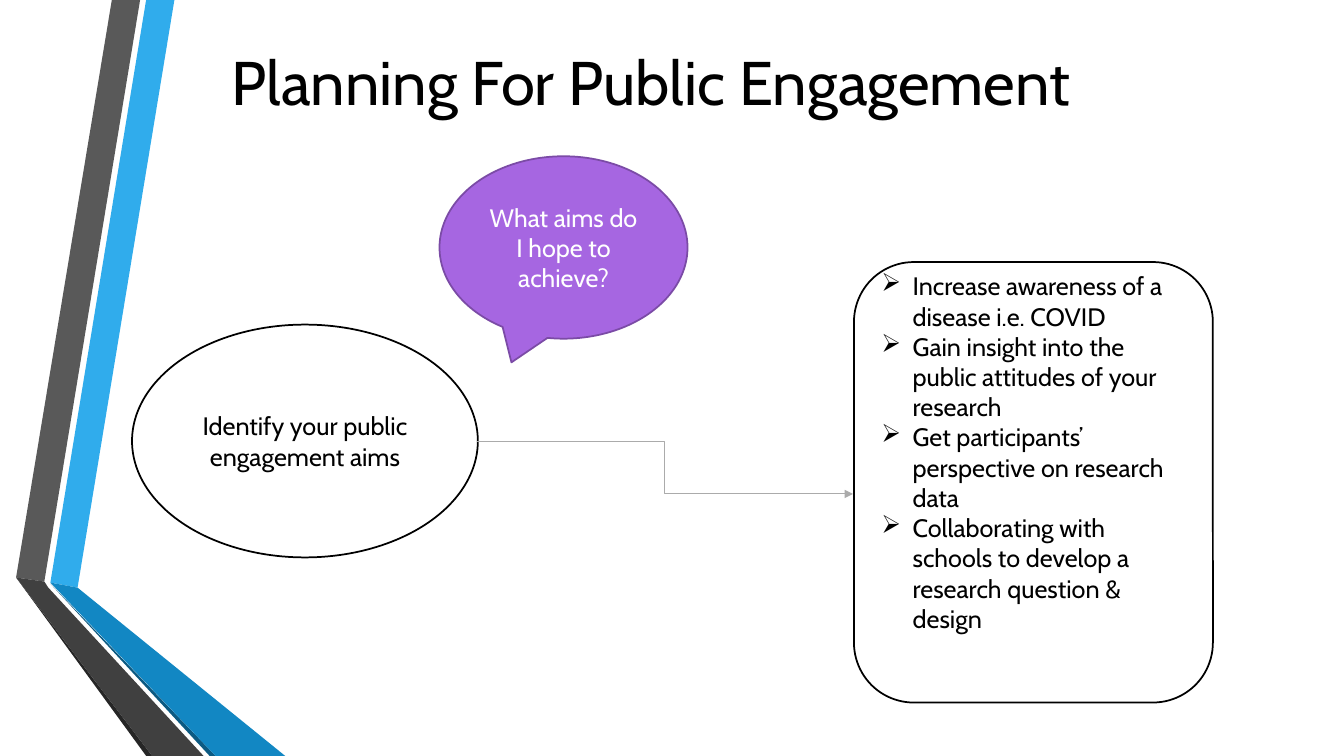
import dataclasses
import typing

import lxml.etree
import pptx
import pptx.dml.color
import pptx.enum.shapes
import pptx.enum.text
import pptx.oxml.ns
import pptx.util

Inches = pptx.util.Inches
ShapeKind = pptx.enum.shapes.MSO_SHAPE
Align = pptx.enum.text.PP_ALIGN
Anchor = pptx.enum.text.MSO_ANCHOR
Point = tuple[float, float]


@dataclasses.dataclass(frozen=True)
class Theme:
    font: str = "Cabin"
    title_size: int = 44
    body_size: int = 18
    outline_width: float = 1.25
    arrow_width: float = 0.75
    black: str = "000000"
    white: str = "FFFFFF"
    purple: str = "A666E1"
    purple_outline: str = "7B4BA6"
    arrow: str = "ABABAB"
    blue: str = "30ACEC"
    blue_fold: str = "1287C3"
    blue_shadow: str = "0C5A82"
    grey: str = "595959"
    grey_fold: str = "404040"
    grey_shadow: str = "262626"


THEME = Theme()


@dataclasses.dataclass(frozen=True)
class Ribbon:
    color: str
    points: list[Point]


@dataclasses.dataclass(frozen=True)
class Bubble:
    kind: ShapeKind
    box: tuple[float, float, float, float]
    fill: str
    outline: str
    text_color: str
    lines: list[str]
    bulleted: bool = False
    bottom_inset: float = 0.05
    adjustments: tuple[float, ...] = ()


RIBBONS = [
    Ribbon(THEME.blue, [(0.5, 5.78), (0.77, 5.83), (1.73, 0), (1.45, 0)]),
    Ribbon(THEME.grey, [(1.39, 0), (1.11, 0), (0.16, 5.73), (0.44, 5.77)]),
    Ribbon(THEME.grey_shadow, [(0.16, 5.73), (1.45, 7.5), (1.51, 7.5)]),
    Ribbon(THEME.blue_shadow, [(0.5, 5.79), (2.08, 7.5), (2.14, 7.5)]),
    Ribbon(THEME.blue_fold, [(0.5, 5.78), (2.14, 7.5), (2.83, 7.5), (0.77, 5.83)]),
    Ribbon(THEME.grey_fold, [(2.02, 7.5), (0.48, 5.83), (0.44, 5.77),
                             (0.16, 5.73), (1.51, 7.5)]),
]

AIMS = Bubble(ShapeKind.OVAL, (1.31, 3.22, 3.43, 2.31), THEME.white, THEME.black,
              THEME.black, ["Identify your public engagement aims"])
QUESTION = Bubble(ShapeKind.OVAL_CALLOUT, (4.36, 1.55, 2.46, 1.81), THEME.purple,
                  THEME.purple_outline, THEME.white,
                  ["What aims do I hope to achieve?"], adjustments=(-0.21, 0.63))
EXAMPLES = Bubble(
    ShapeKind.ROUNDED_RECTANGLE, (8.47, 2.6, 3.56, 4.37), THEME.white, THEME.black,
    THEME.black,
    ["Increase awareness of a disease i.e. COVID",
     "Gain insight into the public attitudes of your research",
     "Get participants’ perspective on research data",
     "Collaborating with schools to develop a research question & design"],
    bulleted=True, bottom_inset=0.65)


def rgb(color: str) -> pptx.dml.color.RGBColor:
    return pptx.dml.color.RGBColor.from_string(color)


def apply_format(target: typing.Any, values: dict[str, typing.Any]) -> None:
    for name, value in values.items():
        setattr(target, name, value)


def paint(shape: typing.Any, color: str) -> None:
    shape.shadow.inherit = False
    shape.fill.solid()
    shape.fill.fore_color.rgb = rgb(color)


def add_bullet(paragraph: typing.Any) -> None:
    properties = paragraph._p.get_or_add_pPr()
    indent = Inches(0.31)
    properties.set("marL", str(indent))
    properties.set("indent", str(-indent))
    bullet = lxml.etree.SubElement(properties, pptx.oxml.ns.qn("a:buChar"))
    bullet.set("char", "➢")


def write_text(frame: typing.Any, lines: list[str], size: int, color: str,
               bulleted: bool = False) -> None:
    for index, line in enumerate(lines):
        paragraph = frame.add_paragraph() if index else frame.paragraphs[0]
        paragraph.alignment = Align.LEFT if bulleted else Align.CENTER
        if bulleted:
            add_bullet(paragraph)
        run = paragraph.add_run()
        run.text = line
        apply_format(run.font, {"name": THEME.font, "size": pptx.util.Pt(size)})
        run.font.color.rgb = rgb(color)


def draw_ribbon(slide: typing.Any, ribbon: Ribbon) -> None:
    points = [(Inches(x), Inches(y)) for x, y in ribbon.points]
    builder = slide.shapes.build_freeform(*points[0])
    builder.add_line_segments(points[1:], close=True)
    shape = builder.convert_to_shape()
    paint(shape, ribbon.color)
    shape.line.fill.background()


def draw_title(slide: typing.Any, text: str) -> None:
    title = slide.shapes.add_textbox(*map(Inches, (1.73, 0.39, 9.46, 0.84)))
    apply_format(title.text_frame, {
        "word_wrap": True,
        "auto_size": pptx.enum.text.MSO_AUTO_SIZE.SHAPE_TO_FIT_TEXT,
    })
    write_text(title.text_frame, [text], THEME.title_size, THEME.black)


def draw_bubble(slide: typing.Any, bubble: Bubble) -> None:
    shape = slide.shapes.add_shape(bubble.kind, *map(Inches, bubble.box))
    for index, value in enumerate(bubble.adjustments):
        shape.adjustments[index] = value
    paint(shape, bubble.fill)
    shape.line.color.rgb = rgb(bubble.outline)
    shape.line.width = pptx.util.Pt(THEME.outline_width)
    apply_format(shape.text_frame, {
        "word_wrap": True,
        "vertical_anchor": Anchor.MIDDLE,
        "margin_bottom": Inches(bubble.bottom_inset),
    })
    write_text(shape.text_frame, bubble.lines, THEME.body_size,
               bubble.text_color, bubble.bulleted)


def draw_elbow_arrow(slide: typing.Any, start: Point, end: Point) -> None:
    connector = slide.shapes.add_connector(
        pptx.enum.shapes.MSO_CONNECTOR.ELBOW, *map(Inches, start + end))
    connector.line.color.rgb = rgb(THEME.arrow)
    connector.line.width = pptx.util.Pt(THEME.arrow_width)
    head = lxml.etree.SubElement(connector.line._get_or_add_ln(),
                                 pptx.oxml.ns.qn("a:tailEnd"))
    head.set("type", "triangle")
    lxml.etree.SubElement(connector._element.spPr, pptx.oxml.ns.qn("a:effectLst"))


def main() -> None:
    presentation = pptx.Presentation()
    apply_format(presentation, {"slide_width": Inches(13.33),
                                "slide_height": Inches(7.5)})
    slide = presentation.slides.add_slide(presentation.slide_layouts[6])

    # Folded ribbons along the left edge
    for ribbon in RIBBONS:
        draw_ribbon(slide, ribbon)

    # Title
    draw_title(slide, "Planning For Public Engagement")

    # Aims, the question they raise, and the examples they lead to
    draw_bubble(slide, AIMS)
    draw_bubble(slide, QUESTION)
    draw_elbow_arrow(slide, (4.73, 4.38), (8.46, 4.9))
    draw_bubble(slide, EXAMPLES)

    presentation.save("out.pptx")


if __name__ == "__main__":
    main()
